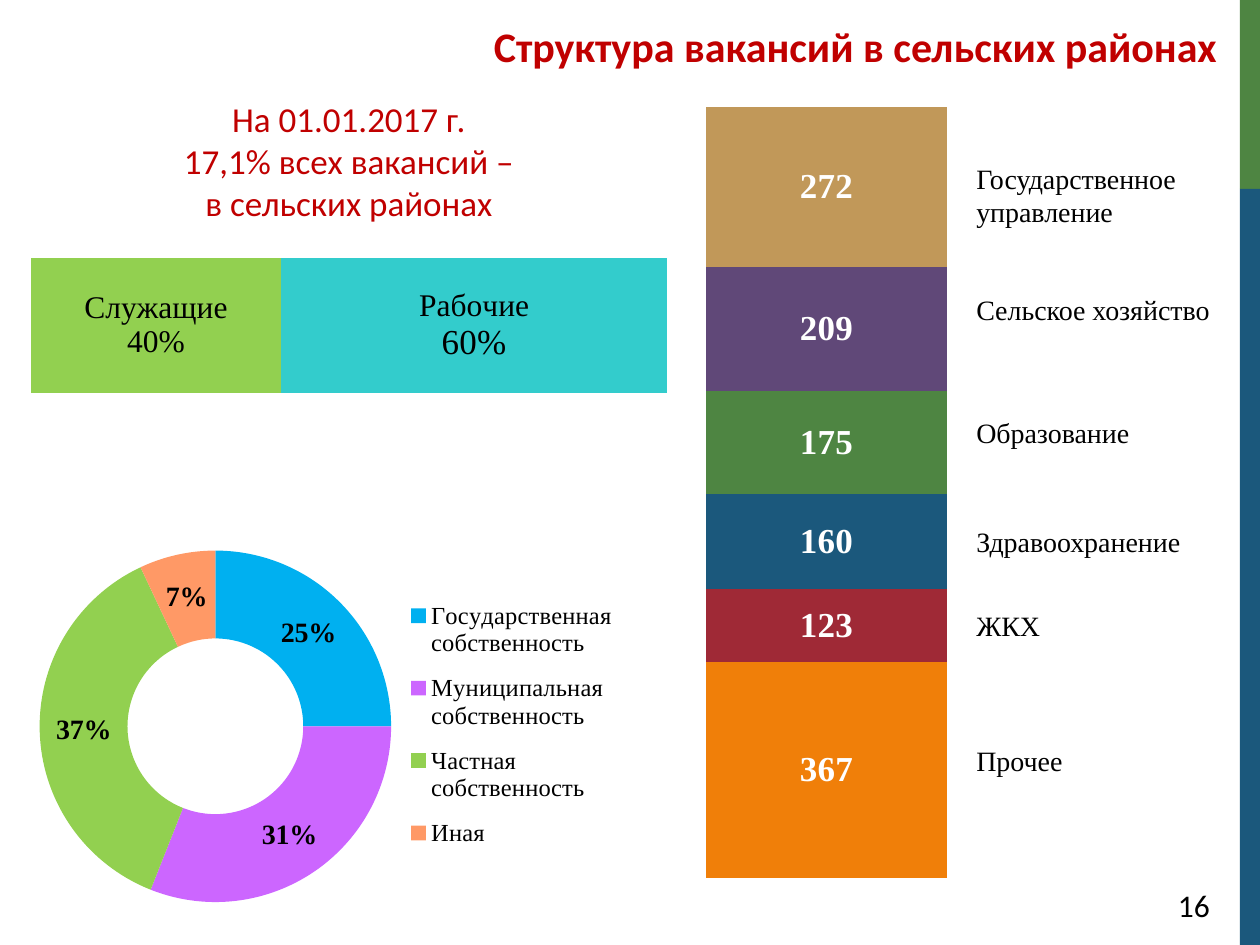
from dataclasses import dataclass

from lxml.etree import SubElement
from pptx import Presentation
from pptx.chart.data import CategoryChartData
from pptx.dml.color import RGBColor
from pptx.enum.chart import XL_CHART_TYPE as ChartType, XL_LEGEND_POSITION as LegendPosition
from pptx.enum.shapes import MSO_SHAPE as Preset
from pptx.enum.text import MSO_ANCHOR as Anchor, MSO_AUTO_SIZE as AutoSize, PP_ALIGN as Align
from pptx.oxml import parse_xml
from pptx.oxml.ns import nsdecls, qn
from pptx.util import Inches, Pt

SERIF = "Times New Roman"
SANS = "Calibri"
COLORS = {
    "black": "000000", "white": "FFFFFF", "heading": "C00000",
    "orange": "F07F09", "red": "9F2936", "blue": "1B587C", "green": "4E8542",
    "purple": "604878", "sand": "C19859", "lime": "92D050", "teal": "33CCCC",
    "sky": "00B0F0", "violet": "CC66FF", "peach": "FF9966",
}


@dataclass
class Box:
    left: float
    top: float
    width: float
    height: float

    def emu(self):
        return [Inches(v) for v in (self.left, self.top, self.width, self.height)]


@dataclass
class Share:
    """One part of a chart: its value, colour and optional label lines with sizes."""
    value: int
    color: str
    label: tuple = ()


@dataclass
class Sector:
    name: str
    box: Box


VACANCIES = [
    Share(367, "orange"), Share(123, "red"), Share(160, "blue"),
    Share(175, "green"), Share(209, "purple"), Share(272, "sand"),
]
STAFF = [
    Share(513, "lime", (("Служащие", 18), ("40%", 18))),
    Share(793, "teal", (("Рабочие", 18), ("60%", 20))),
]
OWNERSHIP = {
    "Государственная собственность": Share(25, "sky"),
    "Муниципальная собственность": Share(31, "violet"),
    "Частная собственность": Share(37, "lime"),
    "Иная": Share(7, "peach"),
}
SECTORS = [
    Sector("Государственное управление", Box(7.65, 1.23, 2.17, 0.63)),
    Sector("Сельское хозяйство", Box(7.65, 2.17, 2.11, 0.57)),
    Sector("Образование", Box(7.65, 3.2, 1.91, 0.47)),
    Sector("Здравоохранение", Box(7.65, 4.06, 2.07, 0.47)),
    Sector("ЖКХ", Box(7.65, 4.69, 2.08, 0.55)),
    Sector("Прочее", Box(7.65, 5.8, 2.08, 0.47)),
]


def rgb(color: str) -> RGBColor:
    return RGBColor.from_string(COLORS[color])


def style_font(font, size: int, name: str, color: str = "black", bold: bool = False) -> None:
    font.size, font.name, font.bold = Pt(size), name, bold
    font.color.rgb = rgb(color)


def fill_text(shape, text: str, size: int, name: str = SERIF, color: str = "black",
              bold: bool = False, align=Align.LEFT, anchor=Anchor.MIDDLE) -> None:
    frame = shape.text_frame
    frame.word_wrap, frame.auto_size = True, AutoSize.NONE
    frame.vertical_anchor = anchor
    frame.text = text
    for paragraph in frame.paragraphs:
        paragraph.alignment = align
        for run in paragraph.runs:
            style_font(run.font, size, name, color, bold)


def outline_text(shape, color: str) -> None:
    for paragraph in shape.text_frame.paragraphs:
        for run in paragraph.runs:
            run.font._element.insert(0, parse_xml(
                f'<a:ln {nsdecls("a")} w="9525"><a:solidFill>'
                f'<a:srgbClr val="{COLORS[color]}"/></a:solidFill></a:ln>'))


def add_text(slide, box: Box, text: str, size: int, **style):
    shape = slide.shapes.add_textbox(*box.emu())
    fill_text(shape, text, size, **style)
    return shape


def add_band(slide, box: Box, color: str) -> None:
    band = slide.shapes.add_shape(Preset.RECTANGLE, *box.emu())
    band.shadow.inherit = False
    band.fill.solid()
    band.fill.fore_color.rgb = rgb(color)
    band.line.fill.background()


def place_part(part, index: int, area: Box, inner: bool = False) -> None:
    """Position a chart part by fractions of the chart's size."""
    for old in part.findall(qn("c:layout")):
        part.remove(old)
    layout = parse_xml(f'<c:layout {nsdecls("c")}><c:manualLayout/></c:layout>')
    values = {"layoutTarget": "inner"} if inner else {}
    values |= {"xMode": "edge", "yMode": "edge", "x": area.left, "y": area.top,
               "w": area.width, "h": area.height}
    for tag, value in values.items():
        SubElement(layout[0], qn(f"c:{tag}")).set("val", str(value))
    part.insert(index, layout)


def add_chart(slide, kind, box: Box, plot_area: Box, data: CategoryChartData):
    chart = slide.shapes.add_chart(kind, *box.emu(), data).chart
    chart.has_title = chart.has_legend = False
    style_font(chart.font, 10, SANS)
    place_part(chart._chartSpace.chart.plotArea, 0, plot_area, inner=True)
    return chart


def add_stack(slide, kind, box: Box, plot_area: Box, shares: list[Share],
              size: int, color: str, bold: bool) -> None:
    data = CategoryChartData()
    data.categories = ["1"]
    for number, share in enumerate(shares, 1):
        data.add_series(f"Series {number}", [share.value])
    chart = add_chart(slide, kind, box, plot_area, data)
    chart.value_axis.has_major_gridlines = False
    chart.value_axis.visible = chart.category_axis.visible = False
    chart.plots[0].gap_width, chart.plots[0].overlap = 150, 100
    for share, series in zip(shares, chart.plots[0].series):
        series.format.fill.solid()
        series.format.fill.fore_color.rgb = rgb(share.color)
        labels = series.data_labels
        labels.show_value = True
        style_font(labels.font, size, SERIF, color, bold)
        if share.label:
            frame = series.points[0].data_label.text_frame
            frame.text = "\n".join(line for line, _ in share.label)
            for paragraph, (_, line_size) in zip(frame.paragraphs, share.label):
                style_font(paragraph.runs[0].font, line_size, SERIF, color, bold)


def add_ownership_ring(slide) -> None:
    data = CategoryChartData()
    data.categories = list(OWNERSHIP)
    data.add_series("Series 1", [share.value for share in OWNERSHIP.values()])
    chart = add_chart(slide, ChartType.DOUGHNUT, Box(0.06, 4.22, 5, 3),
                      Box(0.05, 0.05, 0.56, 0.93), data)
    ring = chart.plots[0]
    for index, share in enumerate(OWNERSHIP.values()):
        fill = ring.series[0].points[index].format.fill
        fill.solid()
        fill.fore_color.rgb = rgb(share.color)
    ring.has_data_labels = True
    labels = ring.data_labels
    labels.show_percentage, labels.show_value = True, False
    labels.number_format, labels.number_format_is_linked = "0%", False
    style_font(labels.font, 16, SERIF, bold=True)

    chart.has_legend = True
    chart.legend.position = LegendPosition.TOP
    chart.legend.include_in_layout = False
    style_font(chart.legend.font, 14, SERIF)
    place_part(chart.legend._element, 1, Box(0.62, 0.14, 0.36, 0.74))


def main() -> None:
    deck = Presentation()
    deck.slide_width, deck.slide_height = Inches(10), Inches(7.5)
    slide = deck.slides.add_slide(deck.slide_layouts[5])

    add_band(slide, Box(9.84, 0, 0.16, 1.5), "green")
    add_band(slide, Box(9.84, 1.5, 0.16, 6), "blue")

    title = slide.shapes.title
    title.left, title.top, title.width, title.height = Box(2.56, 0.05, 7.2, 0.63).emu()
    fill_text(title, "Структура вакансий в сельских районах", 24, SANS, "heading",
              bold=True, align=Align.RIGHT)
    outline_text(title, "heading")

    add_stack(slide, ChartType.COLUMN_STACKED_100, Box(4.06, 0.72, 5, 6.38),
              Box(0.02, 0.02, 0.96, 0.96), VACANCIES, 20, "white", True)
    add_stack(slide, ChartType.BAR_STACKED_100, Box(0, 0.99, 6.16, 3.54),
              Box(0.04, 0.07, 0.82, 0.76), STAFF, 18, "black", False)
    add_ownership_ring(slide)

    summary = add_text(slide, Box(0.25, 0.68, 5.04, 1.18),
                       "На 01.01.2017 г.\n17,1% всех вакансий –\nв сельских районах", 20,
                       name=SANS, color="heading", align=Align.CENTER)
    outline_text(summary, "heading")
    for sector in SECTORS:
        add_text(slide, sector.box, sector.name, 16)
    add_text(slide, Box(9.25, 6.98, 0.69, 0.4), "16", 18, name=SANS, anchor=Anchor.TOP)

    deck.save("out.pptx")


if __name__ == "__main__":
    main()
